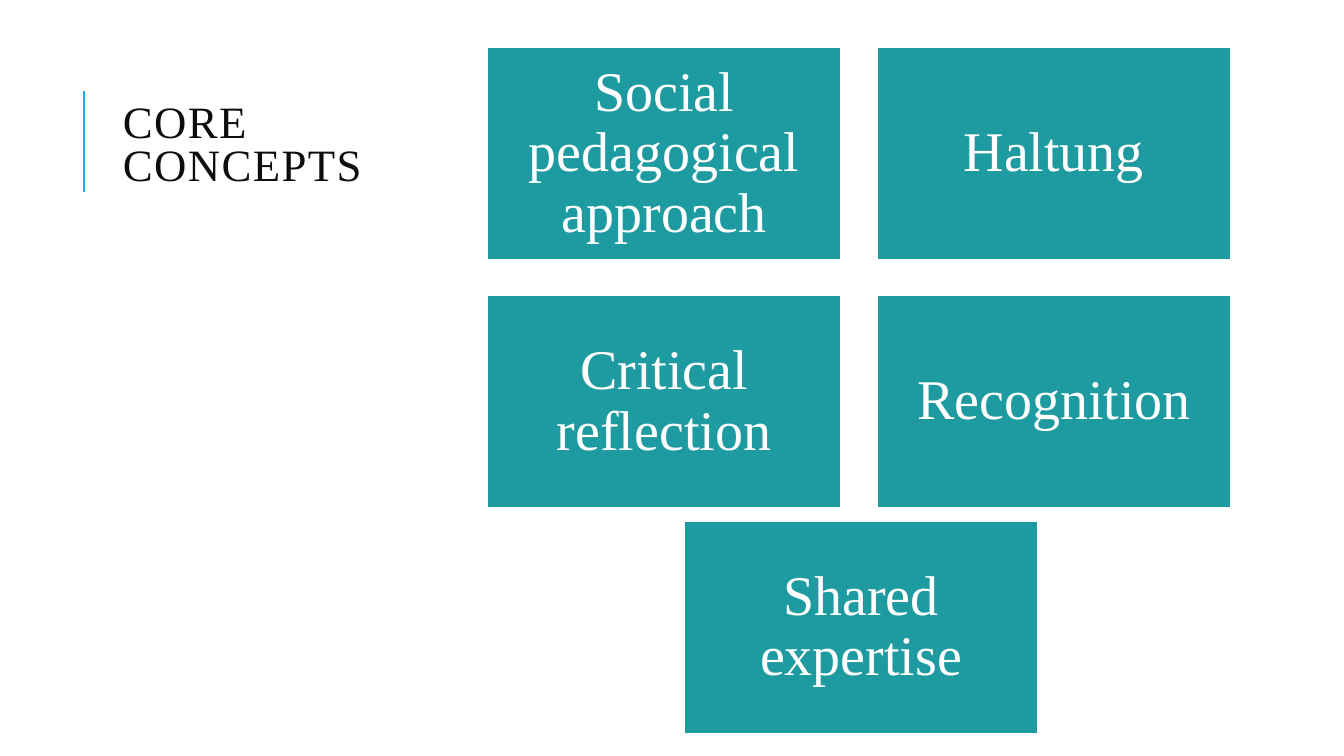
from pptx import Presentation
from pptx.dml.color import RGBColor
from pptx.enum.shapes import MSO_CONNECTOR, MSO_SHAPE
from pptx.enum.text import MSO_ANCHOR, PP_ALIGN
from pptx.oxml.ns import qn
from pptx.util import Inches, Pt
from lxml import etree

STRAIGHT = MSO_CONNECTOR.STRAIGHT
RECTANGLE = MSO_SHAPE.RECTANGLE
MIDDLE = MSO_ANCHOR.MIDDLE
CENTER = PP_ALIGN.CENTER
FONT = "Times New Roman"
COLORS = {"accent": "1CADE4", "title": "0D0D0D", "card": "1D9BA1", "white": "FFFFFF"}
CONCEPT_ROWS = [
    ["Social pedagogical approach", "Haltung"],
    ["Critical reflection", "Recognition"],
]
LAST_CONCEPT = "Shared expertise"


def color(name):
    """Return the named palette colour."""
    return RGBColor.from_string(COLORS[name])


def write_text(shape, text, size, color_name, line_spacing):
    """Put one vertically centred paragraph into a shape and return it."""
    frame = shape.text_frame
    frame.word_wrap = True
    frame.vertical_anchor = MIDDLE
    paragraph = frame.paragraphs[0]
    paragraph.text = text
    paragraph.line_spacing = line_spacing
    paragraph.font.name = FONT
    paragraph.font.size = Pt(size)
    paragraph.font.color.rgb = color(color_name)
    return paragraph


def add_title(slide, left, top, width, height):
    """Add the letter-spaced title with the accent rule on its left."""
    rule_left, rule_top = left - 0.29, top + 0.26
    rule = slide.shapes.add_connector(
        STRAIGHT, Inches(rule_left), Inches(rule_top + 1), Inches(rule_left), Inches(rule_top)
    )
    rule.line.color.rgb = color("accent")
    rule.line.width = Pt(1.5)
    etree.SubElement(rule._element.spPr, qn("a:effectLst"))
    title = slide.shapes.add_textbox(Inches(left), Inches(top), Inches(width), Inches(height))
    paragraph = write_text(title, "CORE CONCEPTS", 32, "title", 0.8)
    paragraph.runs[0]._r.get_or_add_rPr().set("spc", "100")


def add_card(slide, text, left, top, width, height):
    """Add one filled concept card."""
    card = slide.shapes.add_shape(
        RECTANGLE, Inches(left), Inches(top), Inches(width), Inches(height)
    )
    card.shadow.inherit = False
    card.fill.solid()
    card.fill.fore_color.rgb = color("card")
    card.line.color.rgb = color("white")
    card.line.width = Pt(1.25)
    frame = card.text_frame
    frame.margin_left = frame.margin_right = Inches(0.17)
    frame.margin_top = frame.margin_bottom = Inches(0.17)
    write_text(card, text, 40, "white", 0.9).alignment = CENTER


def add_concepts(slide, left, top, width, height):
    """Lay out the card grid, with the last card centred at the bottom."""
    gap = 0.35
    card_width, card_height = (width - gap) / 2, 2.11
    for row, concepts in enumerate(CONCEPT_ROWS):
        for column, concept in enumerate(concepts):
            add_card(
                slide,
                concept,
                left + column * (card_width + gap),
                top + row * (card_height + gap),
                card_width,
                card_height,
            )
    add_card(
        slide,
        LAST_CONCEPT,
        left + (width - card_width) / 2 + 0.02,
        top + height - card_height,
        card_width,
        card_height,
    )


def main():
    """Build and save the presentation."""
    presentation = Presentation()
    presentation.slide_width = Inches(13.33)
    presentation.slide_height = Inches(7.5)
    slide = presentation.slides.add_slide(presentation.slide_layouts[6])
    add_title(slide, 1.12, 0.64, 3.6, 1.64)
    add_concepts(slide, 4.83, 0.47, 7.38, 6.81)
    presentation.save("out.pptx")


if __name__ == "__main__":
    main()
